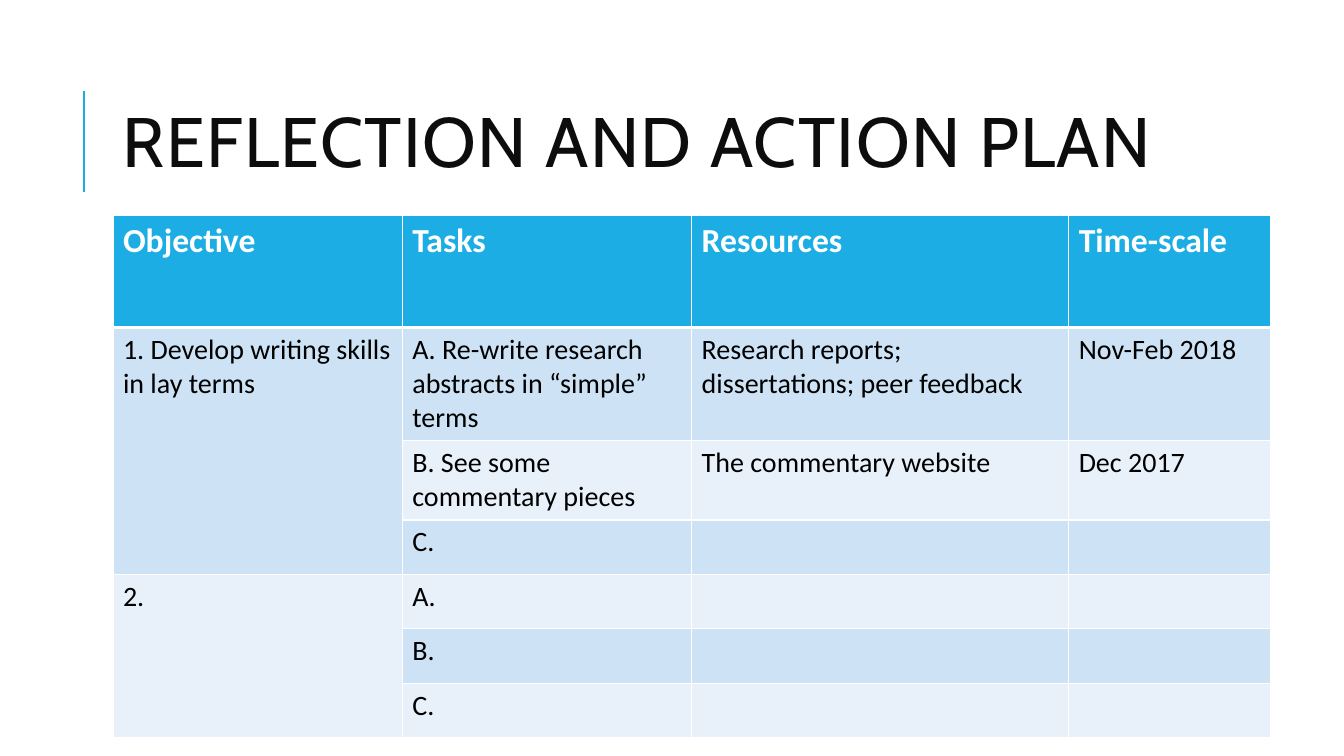
from lxml import etree
from pptx import Presentation
from pptx.dml.color import RGBColor
from pptx.enum.shapes import MSO_CONNECTOR
from pptx.enum.text import MSO_ANCHOR
from pptx.oxml.ns import qn
from pptx.util import Inches, Pt

STRAIGHT = MSO_CONNECTOR.STRAIGHT
MIDDLE = MSO_ANCHOR.MIDDLE

ACCENT, WHITE, BLACK, TITLE_INK = "1CADE4", "FFFFFF", "000000", "0D0D0D"
BANDS = ("CDE3F5", "E8F1FA")

COLUMN_WIDTHS = (2.87, 2.87, 3.74, 2)
ROW_HEIGHTS = (1.11, 1.12, 0.79) + (0.54,) * 4
TASKS_PER_OBJECTIVE = 3
PLAN = (
    ("Objective", "Tasks", "Resources", "Time-scale"),
    ("1. Develop writing skills in lay terms",
     "A. Re-write research abstracts in “simple” terms",
     "Research reports; dissertations; peer feedback", "Nov-Feb 2018"),
    ("", "B. See some commentary pieces", "The commentary website", "Dec 2017"),
    ("", "C.", "", ""),
    ("2.", "A.", "", ""),
    ("", "B.", "", ""),
    ("", "C.", "", ""),
)


def color(value):
    return RGBColor.from_string(value)


def add_span(para, text, font, size, ink, bold=False):
    span = para.add_run()
    span.text = text
    span.font.name = font
    span.font.size = Pt(size)
    span.font.bold = bold
    span.font.color.rgb = color(ink)
    return span


def add_rule(page, x, top, bottom):
    rule = page.shapes.add_connector(
        STRAIGHT, Inches(x), Inches(bottom), Inches(x), Inches(top))
    rule.line.color.rgb = color(ACCENT)
    rule.line.width = Pt(1.5)
    etree.SubElement(rule._element.spPr, qn("a:effectLst"))


def add_title(page, text):
    box = page.shapes.add_textbox(Inches(1.12), Inches(0.64), Inches(10.63), Inches(1.64))
    frame = box.text_frame
    frame.word_wrap = True
    frame.vertical_anchor = MIDDLE
    para = frame.paragraphs[0]
    para.line_spacing = 0.8
    span = add_span(para, text, "Cabin", 50, TITLE_INK)
    span.font._element.set("spc", "100")


def set_borders(cell, bottom_width):
    """Draw white cell edges; they must come before the fill in the XML."""
    properties = cell._tc.get_or_add_tcPr()
    widths = {"lnL": 1, "lnR": 1, "lnT": 1, "lnB": bottom_width}
    for position, (edge, width) in enumerate(widths.items()):
        line = etree.Element(qn("a:" + edge), w=str(Pt(width)))
        fill = etree.SubElement(line, qn("a:solidFill"))
        etree.SubElement(fill, qn("a:srgbClr"), val=WHITE)
        properties.insert(position, line)


def fill_cell(cell, text, row):
    header = row == 0
    cell.fill.solid()
    cell.fill.fore_color.rgb = color(ACCENT if header else BANDS[(row - 1) % 2])
    set_borders(cell, 3 if header else 1)
    para = cell.text_frame.paragraphs[0]
    if text:
        add_span(para, text, "Calibri", 24 if header else 20,
                 WHITE if header else BLACK, header)


def add_plan(page):
    frame = page.shapes.add_table(
        len(PLAN), len(COLUMN_WIDTHS), Inches(1.12), Inches(2.14),
        Inches(sum(COLUMN_WIDTHS)), Inches(sum(ROW_HEIGHTS)))
    table = frame.table
    for column, width in zip(table.columns, COLUMN_WIDTHS):
        column.width = Inches(width)
    for row, height in zip(table.rows, ROW_HEIGHTS):
        row.height = Inches(height)
    for row, texts in enumerate(PLAN):
        for column, text in enumerate(texts):
            fill_cell(table.cell(row, column), text, row)
    # Each objective spans its tasks
    for first in range(1, len(PLAN), TASKS_PER_OBJECTIVE):
        last = first + TASKS_PER_OBJECTIVE - 1
        table.cell(first, 0).merge(table.cell(last, 0))


def main():
    deck = Presentation()
    deck.slide_width, deck.slide_height = Inches(13.33), Inches(7.5)
    page = deck.slides.add_slide(deck.slide_layouts[6])

    # Heading with its side rule
    add_rule(page, 0.83, 0.9, 1.9)
    add_title(page, "REFLECTION AND ACTION PLAN")

    # Action plan table
    add_plan(page)
    deck.save("out.pptx")


if __name__ == "__main__":
    main()
